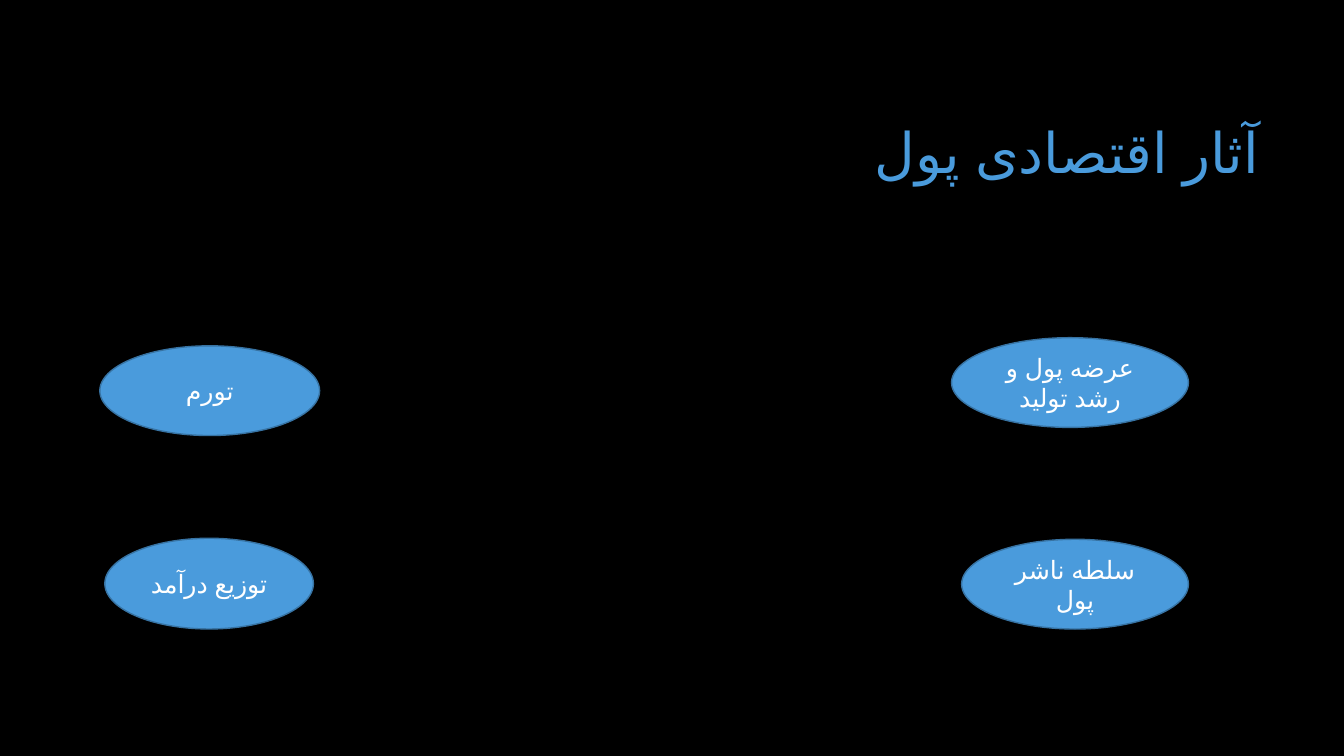
from lxml import etree
from pptx import Presentation
from pptx.dml.color import RGBColor
from pptx.enum import shapes, text
from pptx.oxml import ns
from pptx.util import Pt

BLACK = RGBColor(0x00, 0x00, 0x00)
BLUE = RGBColor(0x4A, 0x9B, 0xDC)
DARK_BLUE = RGBColor(0x37, 0x73, 0xA3)
WHITE = RGBColor(0xFF, 0xFF, 0xFF)
FONT = "Quicksand"

EFFECTS = [
    ("عرضه پول و رشد تولید", 679.7, 241.2, 169.2, 64.1),
    ("سلطه ناشر پول", 686.9, 385.2, 162, 64.1),
    ("توزیع درآمد", 74.9, 384.5, 149, 64.8),
    ("تورم", 71.3, 247, 157, 64.1),
]


def write_persian(shape, words, size, color, alignment):
    """Write one right-to-left paragraph, centred vertically in the shape."""
    frame = shape.text_frame
    frame.word_wrap = True
    frame.vertical_anchor = text.MSO_ANCHOR.MIDDLE
    paragraph = frame.paragraphs[0]
    paragraph.alignment = alignment
    paragraph._p.get_or_add_pPr().set("rtl", "1")
    run = paragraph.add_run()
    run.text = words
    run.font.size = Pt(size)
    run.font.color.rgb = color
    run.font.name = FONT
    properties = run._r.get_or_add_rPr()
    properties.set("lang", "fa-IR")
    etree.SubElement(properties, ns.qn("a:cs")).set("typeface", FONT)
    return paragraph


def add_title(slide, words):
    """Add the right-aligned slide title."""
    shape = slide.shapes.add_textbox(Pt(228.2), Pt(60.5), Pt(678.2), Pt(101.5))
    paragraph = write_persian(shape, words, 40, BLUE, text.PP_ALIGN.RIGHT)
    paragraph.line_spacing = 0.9


def add_effect(slide, words, left, top, width, height):
    """Add an ellipse that names one economic effect."""
    shape = slide.shapes.add_shape(
        shapes.MSO_SHAPE.OVAL, Pt(left), Pt(top), Pt(width), Pt(height))
    shape.shadow.inherit = False
    shape.fill.solid()
    shape.fill.fore_color.rgb = BLUE
    shape.line.color.rgb = DARK_BLUE
    shape.line.width = Pt(1)
    write_persian(shape, words, 18, WHITE, text.PP_ALIGN.CENTER)


def main():
    """Build the slide on the economic effects of money."""
    presentation = Presentation()
    presentation.slide_width = Pt(960)
    presentation.slide_height = Pt(540)
    slide = presentation.slides.add_slide(presentation.slide_layouts[6])
    slide.background.fill.solid()
    slide.background.fill.fore_color.rgb = BLACK
    add_title(slide, "آثار اقتصادی پول")
    for effect in EFFECTS:
        add_effect(slide, *effect)
    presentation.save("out.pptx")


if __name__ == "__main__":
    main()
